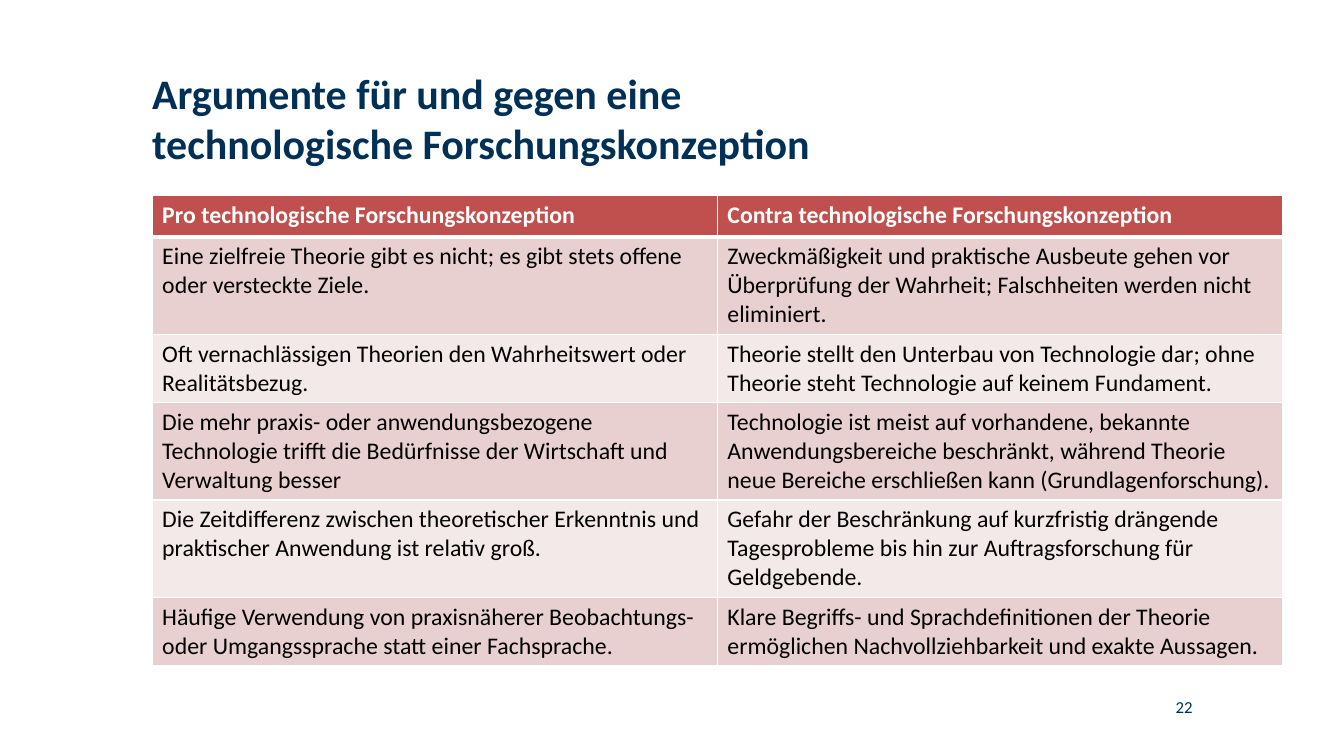
from dataclasses import dataclass

from lxml.etree import SubElement
from pptx import Presentation
from pptx.dml.color import RGBColor as RGB
from pptx.enum.text import MSO_ANCHOR as Anchor, MSO_AUTO_SIZE as AutoSize, PP_ALIGN as Align
from pptx.oxml.ns import qn
from pptx.util import Emu, Inches, Pt


@dataclass(frozen=True)
class Theme:
    font: str = "Calibri"
    navy: str = "003056"
    white: str = "FFFFFF"
    black: str = "000000"
    header: str = "C0504D"
    bands: tuple[str, str] = ("E8D0D0", "F4E9E9")
    title_size: int = 30
    table_size: int = 17
    number_size: int = 12
    rule: int = 1
    header_rule: int = 3


@dataclass(frozen=True)
class Box:
    """A place on the slide, in hundredths of its width and height."""
    left: float
    top: float
    width: float
    height: float

    def emu(self) -> tuple[Emu, Emu, Emu, Emu]:
        return (Emu(int(self.left * SLIDE_W / 100)), Emu(int(self.top * SLIDE_H / 100)),
                Emu(int(self.width * SLIDE_W / 100)), Emu(int(self.height * SLIDE_H / 100)))


@dataclass(frozen=True)
class Argument:
    pro: str
    contra: str


THEME = Theme()
SLIDE_W, SLIDE_H = Inches(13.34), Inches(7.5)
MARGIN = 11.32
ROW_HEIGHT = 5.47

HEADING = Argument("Pro technologische Forschungskonzeption",
                   "Contra technologische Forschungskonzeption")
ARGUMENTS = [
    Argument("Eine zielfreie Theorie gibt es nicht; es gibt stets offene oder versteckte Ziele.",
             "Zweckmäßigkeit und praktische Ausbeute gehen vor Überprüfung der Wahrheit; "
             "Falschheiten werden nicht eliminiert."),
    Argument("Oft vernachlässigen Theorien den Wahrheitswert oder Realitätsbezug.",
             "Theorie stellt den Unterbau von Technologie dar; ohne Theorie steht Technologie "
             "auf keinem Fundament."),
    Argument("Die mehr praxis- oder anwendungsbezogene Technologie trifft die Bedürfnisse der "
             "Wirtschaft und Verwaltung besser",
             "Technologie ist meist auf vorhandene, bekannte Anwendungsbereiche beschränkt, "
             "während Theorie neue Bereiche erschließen kann (Grundlagenforschung)."),
    Argument("Die Zeitdifferenz zwischen theoretischer Erkenntnis und praktischer Anwendung "
             "ist relativ groß.",
             "Gefahr der Beschränkung auf kurzfristig drängende Tagesprobleme bis hin zur "
             "Auftragsforschung für Geldgebende."),
    Argument("Häufige Verwendung von praxisnäherer Beobachtungs- oder Umgangssprache statt "
             "einer Fachsprache.",
             "Klare Begriffs- und Sprachdefinitionen der Theorie ermöglichen "
             "Nachvollziehbarkeit und exakte Aussagen."),
]


def write(tf, text: str, size: int, color: str, bold: bool = False,
          align: Align = Align.LEFT) -> None:
    p = tf.paragraphs[0]
    p.alignment = align
    r = p.add_run()
    r.text = text
    r.font.name = THEME.font
    r.font.size = Pt(size)
    r.font.bold = bold
    r.font.color.rgb = RGB.from_string(color)


def place_text(sp, box: Box) -> None:
    """Put a text shape in its box, without insets and set from the top."""
    sp.left, sp.top, sp.width, sp.height = box.emu()
    tf = sp.text_frame
    tf.margin_left = tf.margin_top = tf.margin_right = tf.margin_bottom = 0
    tf.word_wrap = True
    tf.auto_size = AutoSize.NONE
    tf.vertical_anchor = Anchor.TOP


def add_borders(cell, **widths: int) -> None:
    """Draw white rules, given as side=points in the order L, R, T, B."""
    tcPr = cell._tc.get_or_add_tcPr()
    for side, width in widths.items():
        ln = SubElement(tcPr, qn(f"a:ln{side}"), w=str(Pt(width)))
        fill = SubElement(ln, qn("a:solidFill"))
        SubElement(fill, qn("a:srgbClr"), val=THEME.white)


def add_arguments(s, box: Box) -> None:
    rows = [HEADING, *ARGUMENTS]
    table = s.shapes.add_table(len(rows), 2, *box.emu()).table
    for i, argument in enumerate(rows):
        is_header = i == 0
        color = THEME.white if is_header else THEME.black
        fill = THEME.header if is_header else THEME.bands[(i - 1) % 2]
        above = THEME.header_rule if i == 1 else THEME.rule
        below = THEME.header_rule if is_header else THEME.rule
        for j, text in enumerate((argument.pro, argument.contra)):
            cell = table.cell(i, j)
            add_borders(cell, L=THEME.rule, R=THEME.rule, T=above, B=below)
            cell.fill.solid()
            cell.fill.fore_color.rgb = RGB.from_string(fill)
            write(cell.text_frame, text, THEME.table_size, color, bold=is_header)


def main() -> None:
    prs = Presentation()
    prs.slide_width, prs.slide_height = SLIDE_W, SLIDE_H
    s = prs.slides.add_slide(prs.slide_layouts.get_by_name("Title Only"))

    title = s.shapes.title
    place_text(title, Box(MARGIN, 8.93, 52.92, 18.27))
    write(title.text_frame, "Argumente für und gegen eine technologische Forschungskonzeption",
          THEME.title_size, THEME.navy, bold=True)

    add_arguments(s, Box(MARGIN, 25.87, 84.11, ROW_HEIGHT * (len(ARGUMENTS) + 1)))

    number_box = Box(77.21, 92.13, 11.54, 2.67)
    number = s.shapes.add_textbox(*number_box.emu())
    place_text(number, number_box)
    write(number.text_frame, "22", THEME.number_size, THEME.navy, align=Align.RIGHT)

    prs.save("out.pptx")


if __name__ == "__main__":
    main()
